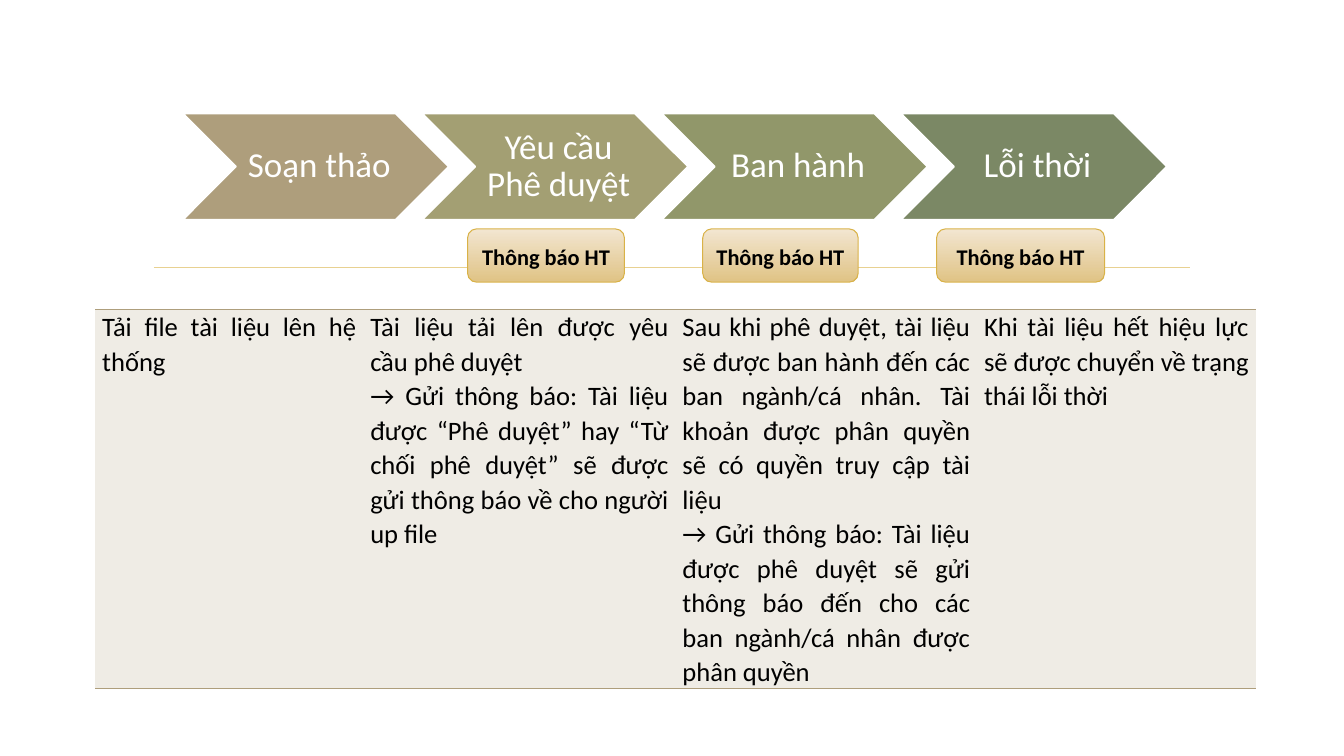
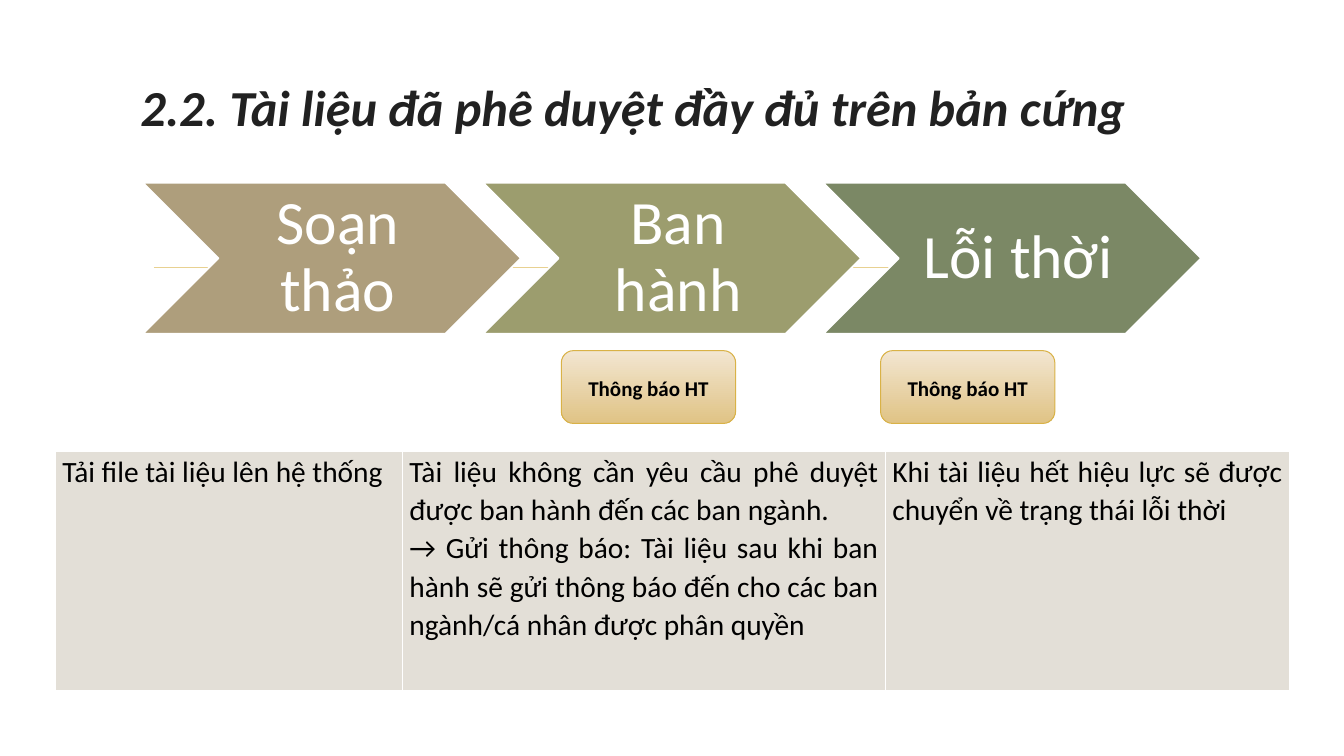
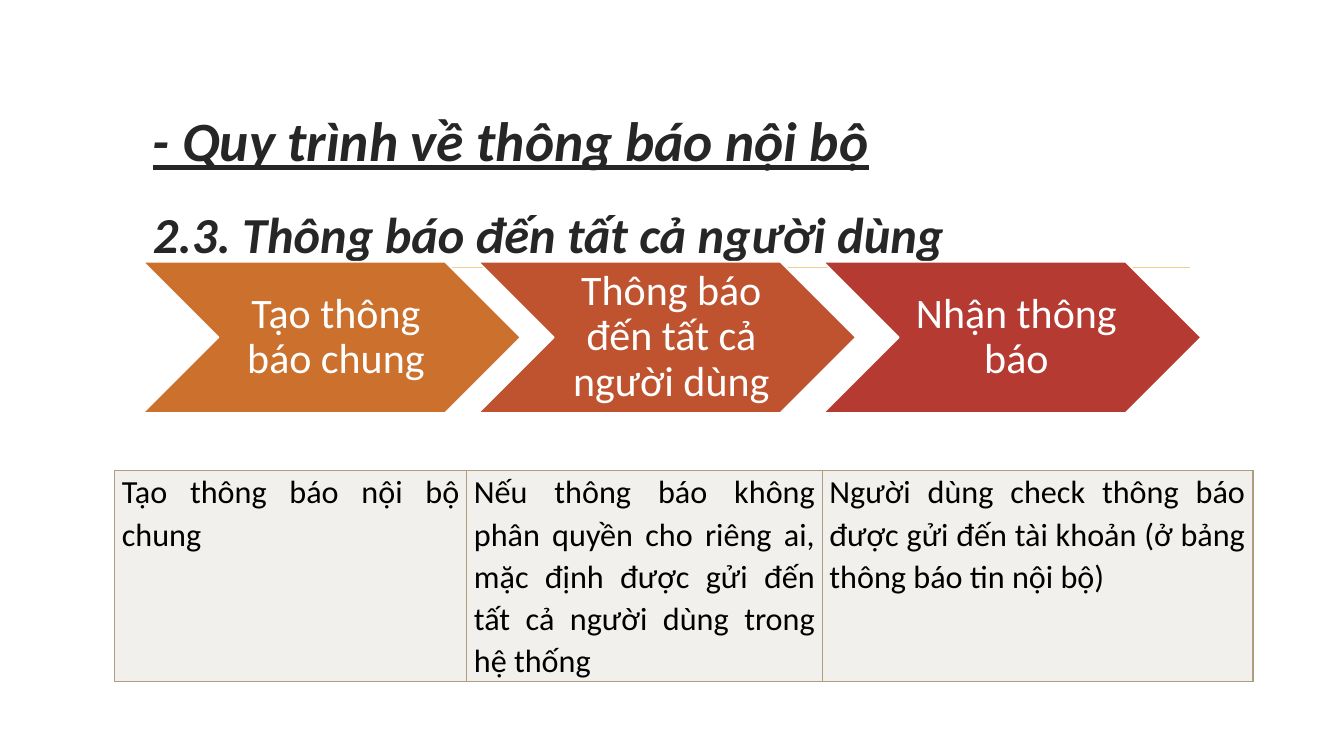
from lxml.etree import SubElement
from pptx import Presentation
from pptx.dml.color import RGBColor
from pptx.enum.shapes import MSO_CONNECTOR, MSO_SHAPE
from pptx.enum.text import MSO_ANCHOR, MSO_AUTO_SIZE, PP_ALIGN
from pptx.oxml.ns import qn
from pptx.util import Pt

# Colours
WHITE = RGBColor(0xFF, 0xFF, 0xFF)
BLACK = RGBColor(0x00, 0x00, 0x00)
INK = RGBColor(0x21, 0x21, 0x21)
GREY = RGBColor(0x26, 0x26, 0x26)
TAN = RGBColor(0xAE, 0x9E, 0x7C)
KHAKI = RGBColor(0xA3, 0x9F, 0x73)
OLIVE = RGBColor(0x91, 0x97, 0x6A)
MOSS = RGBColor(0x9C, 0x9D, 0x6E)
GREEN = RGBColor(0x7B, 0x88, 0x65)
ORANGE = RGBColor(0xCC, 0x70, 0x2D)
RUST = RGBColor(0xC0, 0x53, 0x2F)
RED = RGBColor(0xB5, 0x3A, 0x31)
RULE = RGBColor(0xE8, 0xD1, 0x91)
GOLD = RGBColor(0xD9, 0xB2, 0x47)
CREAM = RGBColor(0xF2, 0xE6, 0xD1)
SAND = RGBColor(0xE0, 0xC3, 0x85)
LINEN = RGBColor(0xEF, 0xEC, 0xE5)
STONE = RGBColor(0xE3, 0xDF, 0xD7)
PEARL = RGBColor(0xF2, 0xF0, 0xEC)

FONT = "Calibri"
NOTICE = "Thông báo HT"


def write(frame, *lines, size=18, color=BLACK, bold=False, italic=False,
          under=False, align=PP_ALIGN.LEFT, space=1.0):
    """Fill a frame with one paragraph for each line."""
    for i, line in enumerate(lines):
        para = frame.paragraphs[0] if i == 0 else frame.add_paragraph()
        para.alignment = align
        para.line_spacing = space
        run = para.add_run()
        run.text = line
        font = run.font
        font.name, font.size, font.color.rgb = FONT, Pt(size), color
        font.bold, font.italic, font.underline = bold, italic, under


class Deck:
    def __init__(self):
        self.prs = Presentation()
        self.prs.slide_width, self.prs.slide_height = Pt(960), Pt(540)
        self.slide = None

    def page(self, titled=True):
        """Start a slide with the shared gold rule."""
        layout = self.prs.slide_layouts[5 if titled else 6]
        self.slide = self.prs.slides.add_slide(layout)
        rule = self.slide.shapes.add_connector(
            MSO_CONNECTOR.STRAIGHT, Pt(110), Pt(191), Pt(850), Pt(191))
        rule.line.color.rgb, rule.line.width = RULE, Pt(1.25)
        SubElement(rule._element.spPr, qn("a:effectLst"))

    def title(self, left, top, height, *lines, **style):
        box = self.slide.shapes.title
        box.left, box.top = Pt(left), Pt(top)
        box.width, box.height = Pt(756), Pt(height)
        frame = box.text_frame
        frame.auto_size = MSO_AUTO_SIZE.NONE
        frame.vertical_anchor = MSO_ANCHOR.BOTTOM
        write(frame, *lines, bold=True, italic=True, **style)
        return frame

    def shape(self, kind, left, top, width, height, edge, weight):
        item = self.slide.shapes.add_shape(
            kind, Pt(left), Pt(top), Pt(width), Pt(height))
        item.shadow.inherit = False
        item.line.color.rgb, item.line.width = edge, Pt(weight)
        frame = item.text_frame
        frame.word_wrap = True
        frame.vertical_anchor = MSO_ANCHOR.MIDDLE
        return item, frame

    def steps(self, lefts, top, width, height, size, items):
        """Row of chevrons; items are (text, colour)."""
        for left, (text, color) in zip(lefts, items):
            item, frame = self.shape(MSO_SHAPE.CHEVRON, left, top, width,
                                     height, WHITE, 1.25)
            item.fill.solid()
            item.fill.fore_color.rgb = color
            pad = round(size * 0.1, 1)
            frame.margin_left = Pt(3 * pad)
            frame.margin_right = frame.margin_top = frame.margin_bottom = Pt(pad)
            write(frame, text, size=size, color=WHITE,
                  align=PP_ALIGN.CENTER, space=0.9)

    def badges(self, spans, top, height, size):
        """Row of notice badges; spans are (left, width)."""
        for left, width in spans:
            item, frame = self.shape(MSO_SHAPE.ROUNDED_RECTANGLE, left, top,
                                     width, height, GOLD, 0.75)
            item.fill.gradient()
            item.fill.gradient_angle = 270
            for stop, color in zip(item.fill.gradient_stops, (CREAM, SAND)):
                stop.color.rgb = color
            write(frame, NOTICE, size=size, bold=True,
                  align=PP_ALIGN.CENTER, space=1.07)

    def table(self, left, top, height, cols, cells, size, fill, edge,
              sides="LRTB"):
        """One-row table; each cell is a tuple of paragraphs."""
        grid = self.slide.shapes.add_table(
            1, len(cols), Pt(left), Pt(top), Pt(sum(cols)), Pt(height)).table
        grid.first_row = grid.horz_banding = False
        for col, width in zip(grid.columns, cols):
            col.width = Pt(width)
        for cell, lines in zip(grid.rows[0].cells, cells):
            cell.margin_left = cell.margin_right = Pt(5)
            cell.margin_top = cell.margin_bottom = Pt(0)
            self.border(cell, edge, sides)
            cell.fill.solid()
            cell.fill.fore_color.rgb = fill
            write(cell.text_frame, *lines, size=size,
                  align=PP_ALIGN.JUSTIFY, space=1.07)

    def border(self, cell, color, sides):
        props = cell._tc.get_or_add_tcPr()
        for side in "LRTB":
            line = SubElement(props, qn(f"a:ln{side}"), w=str(Pt(1)))
            if side in sides:
                paint = SubElement(line, qn("a:solidFill"))
                SubElement(paint, qn("a:srgbClr"), val=str(color))
            else:
                SubElement(line, qn("a:noFill"))


def main():
    deck = Deck()

    # Slide 1: four-step document flow
    deck.page(titled=False)
    deck.table(68, 221, 266, (191.5, 223, 215.5, 199), (
        ("Tải file tài liệu lên hệ thống",),
        ("Tài liệu tải lên được yêu cầu phê duyệt",
         "→ Gửi thông báo: Tài liệu được “Phê duyệt” hay “Từ chối phê duyệt” "
         "sẽ được gửi thông báo về cho người up file"),
        ("Sau khi phê duyệt, tài liệu sẽ được ban hành đến các ban ngành/cá "
         "nhân. Tài khoản được phân quyền sẽ có quyền truy cập tài liệu",
         "→ Gửi thông báo: Tài liệu được phê duyệt sẽ gửi thông báo đến cho "
         "các ban ngành/cá nhân được phân quyền"),
        ("Khi tài liệu hết hiệu lực sẽ được chuyển về trạng thái lỗi thời",),
    ), 19, LINEN, TAN, sides="TB")
    deck.steps([130.5 + 171 * i for i in range(4)], 81, 190, 76, 25, (
        ("Soạn thảo", TAN), ("Yêu cầu Phê duyệt", KHAKI),
        ("Ban hành", OLIVE), ("Lỗi thời", GREEN)))
    deck.badges(((334, 112), (502, 111), (669, 120)), 163.5, 38, 16)

    # Slide 2: documents already approved on paper
    deck.page()
    deck.title(93, 44, 58, "2.2. Tài liệu đã phê duyệt đầy đủ trên bản cứng",
               size=36, color=INK, space=0.9)
    deck.steps([102 + 243 * i for i in range(3)], 130.5, 270, 108, 44, (
        ("Soạn thảo", TAN), ("Ban hành", MOSS), ("Lỗi thời", GREEN)))
    deck.badges(((401, 124.5), (629, 124.5)), 250.5, 52, 15)
    deck.table(39.5, 322.5, 170.5, (248, 345, 288.5), (
        ("Tải file tài liệu lên hệ thống",),
        ("Tài liệu không cần yêu cầu phê duyệt được ban hành đến các ban "
         "ngành.",
         "→ Gửi thông báo: Tài liệu sau khi ban hành sẽ gửi thông báo đến cho "
         "các ban ngành/cá nhân được phân quyền"),
        ("Khi tài liệu hết hiệu lực sẽ được chuyển về trạng thái lỗi thời",),
    ), 21, STONE, WHITE)

    # Slide 3: notice to all users
    deck.page()
    frame = deck.title(102, 72, 120, "- Quy trình về thông báo nội bộ",
                       "2.3. Thông báo đến tất cả người dùng",
                       size=36, color=GREY, space=1.5)
    lead = frame.paragraphs[0].runs[0].font
    lead.size, lead.underline = Pt(39.6), True
    deck.steps((102, 341.5, 588), 187, 270, 108, 30, (
        ("Tạo thông báo chung", ORANGE),
        ("Thông báo đến tất cả người dùng", RUST),
        ("Nhận thông báo", RED)))
    deck.table(82, 336, 136, (251.5, 254, 307.5), (
        ("Tạo thông báo nội bộ chung",),
        ("Nếu thông báo không phân quyền cho riêng ai, mặc định được gửi đến "
         "tất cả người dùng trong hệ thống",),
        ("Người dùng check thông báo được gửi đến tài khoản (ở bảng thông báo "
         "tin nội bộ)",),
    ), 23, PEARL, TAN)

    deck.prs.save("out.pptx")


if __name__ == "__main__":
    main()
